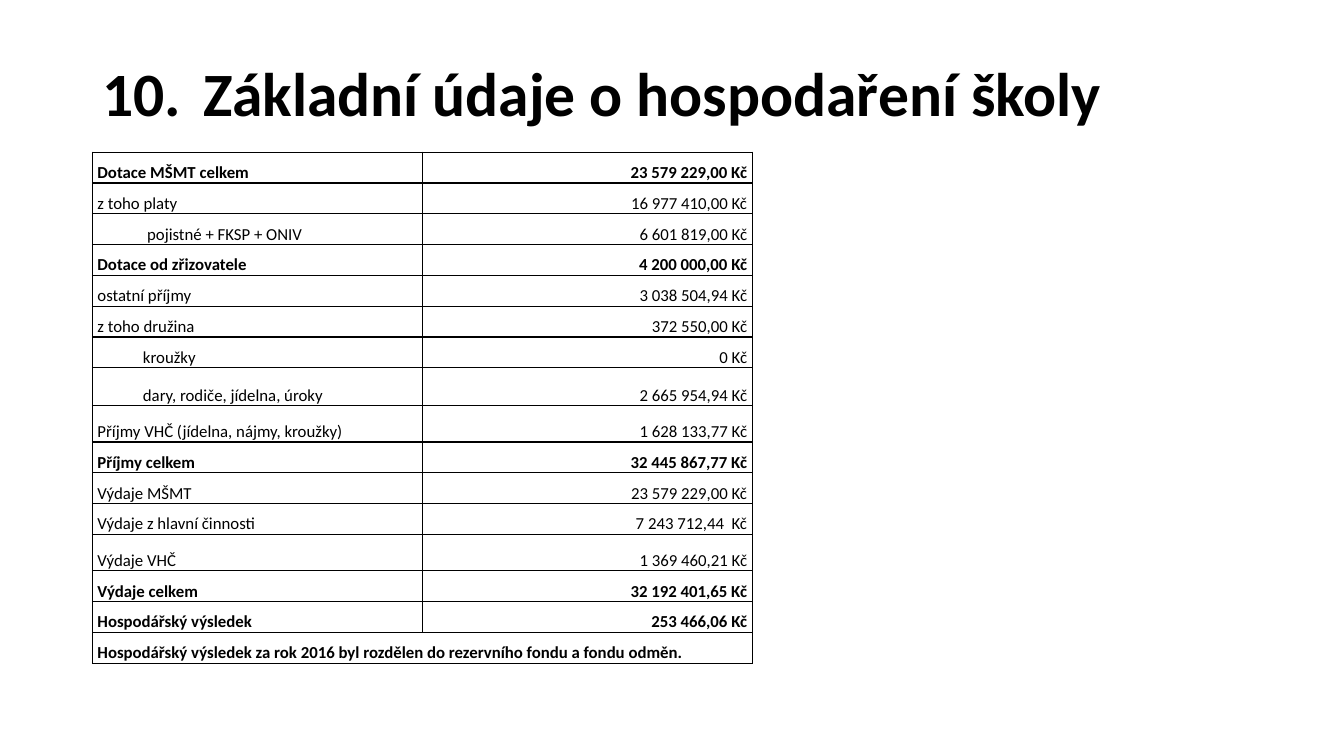
"""Build the slide with the table of the school's basic financial figures."""
from pptx import Presentation
from pptx.dml.color import RGBColor
from pptx.enum.text import MSO_ANCHOR as Anchor, PP_ALIGN as Align
from pptx.oxml import parse_xml
from pptx.oxml.ns import nsdecls
from pptx.util import Pt

INK = "000000"
LABEL_STYLE = {"alignment": Align.JUSTIFY, "line_spacing": 1.5, "space_after": Pt(10)}
VALUE_STYLE = {**LABEL_STYLE, "alignment": Align.RIGHT}
TITLE_STYLE = {"alignment": Align.LEFT, "line_spacing": 0.9}
CELL_FORMAT = {"vertical_anchor": Anchor.BOTTOM, "margin_left": Pt(3.6),
               "margin_right": Pt(3.6), "margin_top": 0, "margin_bottom": 0}
NORMAL, MEDIUM, TALL = 22, 26, 27

ROWS = [
    ("Dotace MŠMT celkem", "23 579 229,00 Kč", True, 0, NORMAL),
    ("z toho platy", "16 977 410,00 Kč", False, 0, NORMAL),
    ("pojistné + FKSP + ONIV", "6 601 819,00 Kč", False, 35.5, NORMAL),
    ("Dotace od zřizovatele", "4 200 000,00 Kč", True, 0, NORMAL),
    ("ostatní příjmy", "3 038 504,94 Kč", False, 0, NORMAL),
    ("z toho družina", "372 550,00 Kč", False, 0, NORMAL),
    ("kroužky", "0 Kč", False, 32.5, NORMAL),
    ("dary, rodiče, jídelna, úroky", "2 665 954,94 Kč", False, 32.5, TALL),
    ("Příjmy VHČ (jídelna, nájmy, kroužky)", "1 628 133,77 Kč", False, 0, MEDIUM),
    ("Příjmy celkem", "32 445 867,77 Kč", True, 0, NORMAL),
    ("Výdaje MŠMT", "23 579 229,00 Kč", False, 0, NORMAL),
    ("Výdaje z hlavní činnosti", "7 243 712,44  Kč", False, 0, NORMAL),
    ("Výdaje VHČ", "1 369 460,21 Kč", False, 0, MEDIUM),
    ("Výdaje celkem", "32 192 401,65 Kč", True, 0, NORMAL),
    ("Hospodářský výsledek", "253 466,06 Kč", True, 0, NORMAL),
    ("Hospodářský výsledek za rok 2016 byl rozdělen do rezervního fondu a fondu odměn.",
     "", True, 0, NORMAL),
]


def write(frame, text, size, bold, style):
    """Fill the first paragraph of a text frame with one formatted run."""
    para = frame.paragraphs[0]
    for name, value in style.items():
        setattr(para, name, value)
    span = para.add_run()
    span.text = text
    for name, value in {"name": "Calibri", "size": Pt(size), "bold": bold}.items():
        setattr(span.font, name, value)
    span.font.color.rgb = RGBColor.from_string(INK)
    return para


def draw_borders(cell):
    """Give a cell a thin solid line on all four sides."""
    props = cell._tc.get_or_add_tcPr()
    for place, side in enumerate(("lnL", "lnR", "lnT", "lnB")):
        props.insert(place, parse_xml(
            f'<a:{side} {nsdecls("a")} w="{Pt(1)}"><a:solidFill>'
            f'<a:srgbClr val="{INK}"/></a:solidFill></a:{side}>'))


deck = Presentation()
deck.slide_width, deck.slide_height = Pt(960), Pt(540)
page = deck.slides.add_slide(deck.slide_layouts[5])

title = page.shapes.title
for name, value in {"left": 66, "top": 30, "width": 828, "height": 78.5}.items():
    setattr(title, name, Pt(value))
title.text_frame.vertical_anchor = Anchor.MIDDLE
write(title.text_frame, "10. \tZákladní údaje o hospodaření školy", 44, True, TITLE_STYLE)

total = sum(row[-1] for row in ROWS)
grid = page.shapes.add_table(len(ROWS), 2, Pt(66), Pt(108.75), Pt(471.4), Pt(total)).table
grid.first_row = grid.horz_banding = False

for index, (label, amount, bold, indent, height) in enumerate(ROWS):
    grid.rows[index].height = Pt(height)
    for column, (text, style) in enumerate(((label, LABEL_STYLE), (amount, VALUE_STYLE))):
        cell = grid.cell(index, column)
        for name, value in CELL_FORMAT.items():
            setattr(cell, name, value)
        cell.fill.background()
        draw_borders(cell)
        if text:
            para = write(cell.text_frame, text, 12, bold, style)
            if indent and column == 0:
                para._p.get_or_add_pPr().set("marL", str(Pt(indent)))

note = len(ROWS) - 1
grid.cell(note, 0).merge(grid.cell(note, 1))

deck.save("out.pptx")
